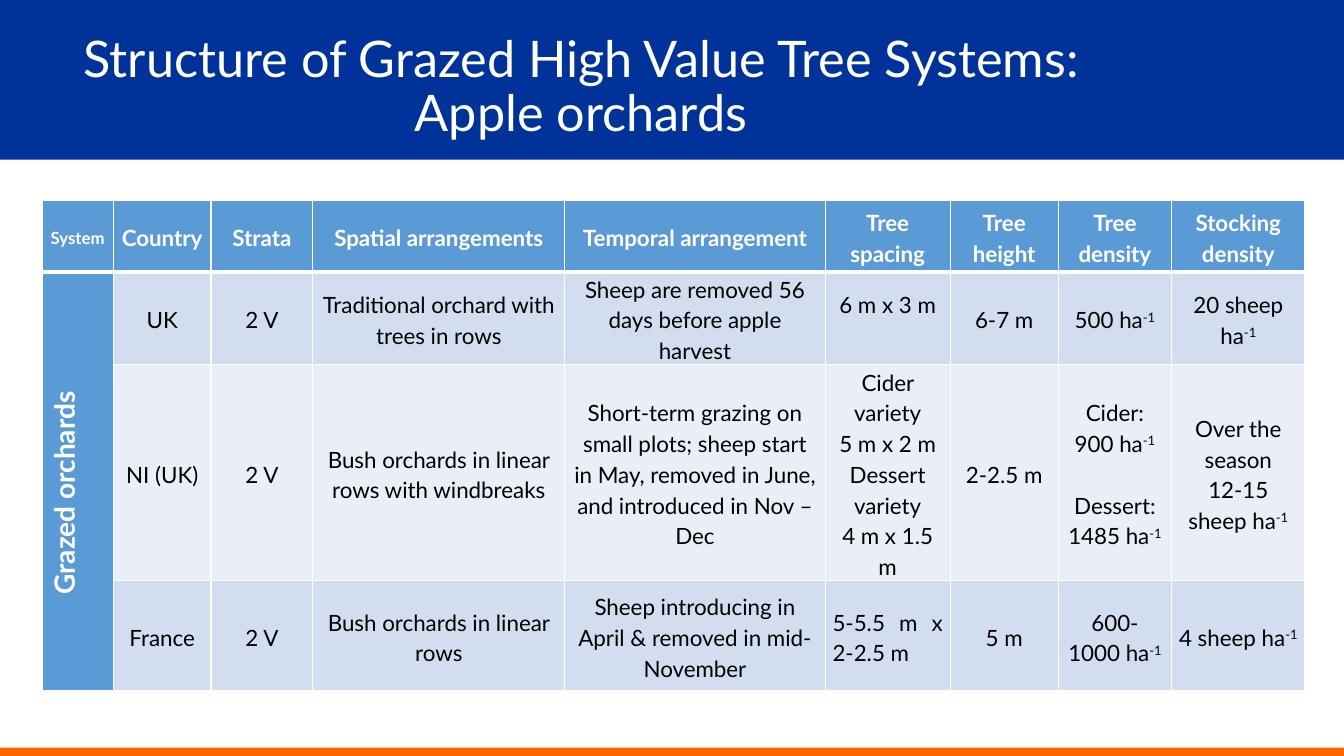
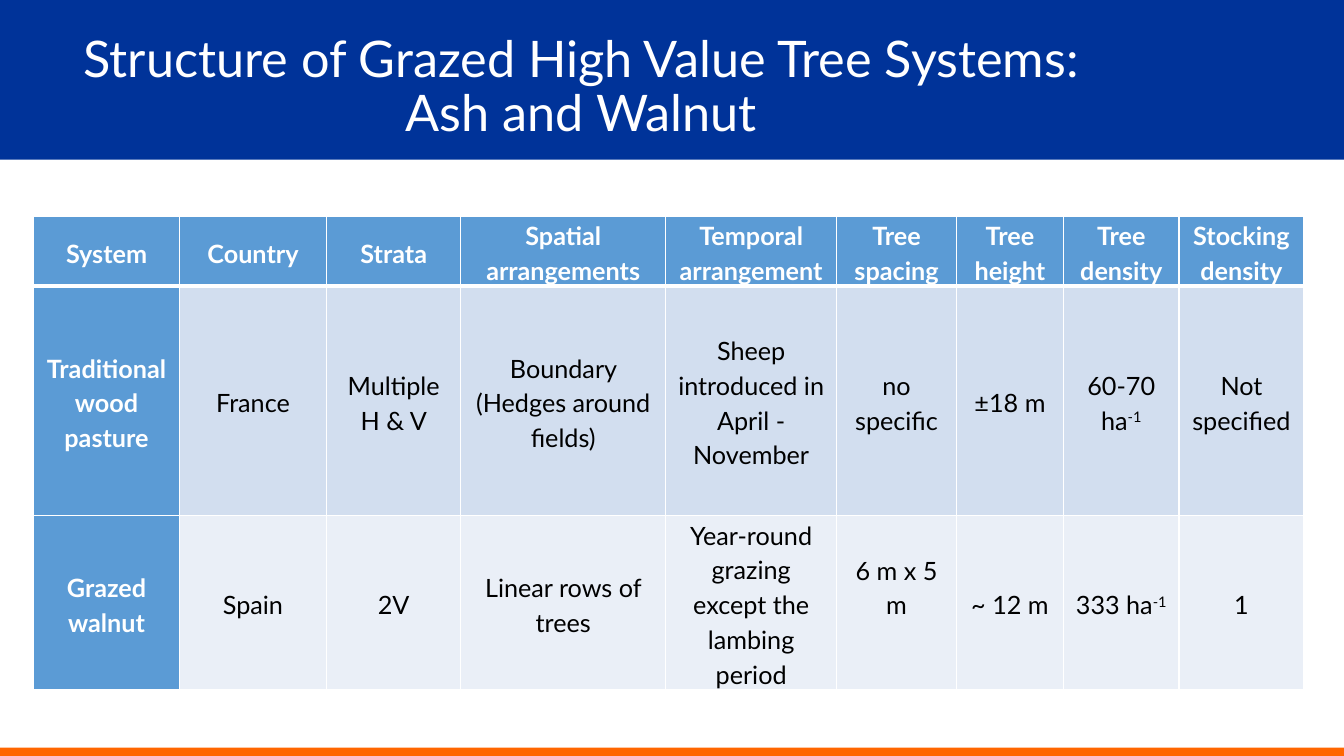
from lxml.etree import SubElement
from pptx import Presentation
from pptx.dml.color import RGBColor
from pptx.enum.shapes import MSO_SHAPE
from pptx.enum.text import MSO_ANCHOR, PP_ALIGN
from pptx.oxml.ns import qn
from pptx.util import Emu, Pt

FONT = "Lato"
WHITE, BLACK = "FFFFFF", "000000"
NAVY, ORANGE = "003399", "FF6600"
HEAD_FILL, BANDS = "5B9BD5", ("D2DEEF", "EAEFF7")
WIDTH, HEIGHT = 1280, 720
HEADER = ["System", "Country", "Strata", "Spatial arrangements", "Temporal arrangement",
          "Tree spacing", "Tree height", "Tree density", "Stocking density"]

APPLE_ROWS = [
    ["Grazed orchards", "UK", "2 V", "Traditional orchard with trees in rows",
     "Sheep are removed 56 days before apple harvest", "6 m x 3 m", "6-7 m",
     "500 ha^-1", "20 sheep ha^-1"],
    ["", "NI (UK)", "2 V", "Bush orchards in linear rows with windbreaks",
     "Short-term grazing on small plots; sheep start in May, removed in June, "
     "and introduced in Nov – Dec",
     "Cider variety\n5 m x 2 m\nDessert variety\n4 m x 1.5 m", "2-2.5 m",
     "Cider: 900 ha^-1\nDessert: 1485 ha^-1", "Over the season\n12-15 sheep ha^-1"],
    ["", "France", "2 V", "Bush orchards in linear rows",
     "Sheep introducing in April & removed in mid-November", "5-5.5 m x 2-2.5 m", "5 m",
     "600-1000 ha^-1", "4 sheep ha^-1"],
]
WALNUT_ROWS = [
    ["Traditional wood pasture", "France", "Multiple\nH & V",
     "Boundary (Hedges around fields)", "Sheep introduced in April - November",
     "no specific", "±18 m", "60-70 ha^-1", "Not specified"],
    ["Grazed walnut", "Spain", "2V", "Linear rows of trees",
     "Year-round grazing except the lambing period", "6 m x 5 m", "~ 12 m",
     "333 ha^-1", "1"],
]


def px(n):
    """Turn pixels into EMU."""
    return Emu(n * 9525)


def color(value):
    """Turn a hex string into a colour."""
    return RGBColor.from_string(value)


def style(p, size, fill, bold=False, align=PP_ALIGN.CENTER, spacing=1.15):
    """Set the font and layout of a paragraph."""
    p.alignment, p.line_spacing = align, spacing
    p.font.name, p.font.size, p.font.bold = FONT, Pt(size), bold
    p.font.color.rgb = color(fill)


def add_band(s, top, height, fill):
    """Draw a full-width band."""
    sp = s.shapes.add_shape(MSO_SHAPE.RECTANGLE, 0, px(top), px(WIDTH), px(height))
    sp.shadow.inherit = False
    sp.fill.solid()
    sp.fill.fore_color.rgb = color(fill)
    sp.line.fill.background()


def add_titled_slide(prs, topic):
    """Add a slide with both bands and its two-line title."""
    s = prs.slides.add_slide(prs.slide_layouts[6])
    add_band(s, 0, 152, NAVY)
    add_band(s, 712, 8, ORANGE)
    tf = s.shapes.add_textbox(px(42), px(37), px(1023), px(94)).text_frame
    tf.word_wrap = True
    tf.vertical_anchor = MSO_ANCHOR.MIDDLE
    p = tf.paragraphs[0]
    p.add_run().text = "Structure of Grazed High Value Tree Systems:"
    p.add_line_break()
    p.add_run().text = topic
    style(p, 36, WHITE, spacing=0.9)
    return s


def set_borders(cell, top, bottom):
    """Give a cell white borders, with top and bottom widths in points."""
    tc_pr = cell._tc.get_or_add_tcPr()
    for side, width in (("L", 1), ("R", 1), ("T", top), ("B", bottom)):
        ln = SubElement(tc_pr, qn(f"a:ln{side}"), w=str(Pt(width)))
        SubElement(SubElement(ln, qn("a:solidFill")), qn("a:srgbClr"), val=WHITE)


def fill_cell(cell, text, size, row, heading):
    """Fill one cell; ^ starts a superscript and a line break a paragraph."""
    set_borders(cell, 3 if row == 1 else 1, 3 if row == 0 else 1)
    cell.fill.solid()
    cell.fill.fore_color.rgb = color(HEAD_FILL if heading else BANDS[(row - 1) % 2])
    cell.vertical_anchor = MSO_ANCHOR.MIDDLE
    cell.margin_left = cell.margin_right = px(7)
    cell.margin_top = cell.margin_bottom = 0
    tf = cell.text_frame
    for i, line in enumerate(text.split("\n")):
        p = tf.add_paragraph() if i else tf.paragraphs[0]
        base, _, power = line.partition("^")
        p.add_run().text = base
        if power:
            r = p.add_run()
            r.text = power
            r._r.get_or_add_rPr().set("baseline", "30000")
        style(p, size, WHITE if heading else BLACK, heading)


def add_system_table(s, left, top, widths, heights, rows, size):
    """Add the table of tree systems."""
    rows = [HEADER] + rows
    table = s.shapes.add_table(len(rows), len(HEADER), px(left), px(top),
                               px(sum(widths)), px(sum(heights))).table
    table.first_col, table.horz_banding = True, False
    for column, width in zip(table.columns, widths):
        column.width = px(width)
    for i, (height, row) in enumerate(zip(heights, rows)):
        table.rows[i].height = px(height)
        for j, text in enumerate(row):
            fill_cell(table.cell(i, j), text, size, i, i == 0 or j == 0)
    return table


def build_apple_slide(prs):
    """Build the slide on apple orchards."""
    s = add_titled_slide(prs, "Apple orchards")
    table = add_system_table(s, 40, 191, [68, 93, 97, 240, 248, 119, 103, 108, 127],
                             [68, 88, 205, 105], APPLE_ROWS, 16)
    table.cell(0, 0).text_frame.paragraphs[0].font.size = Pt(12)
    system = table.cell(1, 0)
    system.merge(table.cell(3, 0))
    system._tc.get_or_add_tcPr().set("vert", "vert270")
    system.margin_left, system.margin_right = px(4), px(26)
    system.text_frame.paragraphs[0].font.size = Pt(20)
    table.cell(1, 5).margin_bottom = px(29)
    table.cell(2, 7).text_frame.paragraphs[1].space_before = Pt(22)
    table.cell(3, 5).text_frame.paragraphs[0].alignment = PP_ALIGN.JUSTIFY


def build_walnut_slide(prs):
    """Build the slide on ash and walnut."""
    s = add_titled_slide(prs, "Ash and Walnut")
    table = add_system_table(s, 32, 206, [139, 140, 128, 195, 163, 114, 102, 110, 119],
                             [66, 219, 165], WALNUT_ROWS, 18)
    table.cell(2, 5).margin_bottom = px(33)


def main():
    """Build and save the presentation."""
    prs = Presentation()
    prs.slide_width, prs.slide_height = px(WIDTH), px(HEIGHT)
    build_apple_slide(prs)
    build_walnut_slide(prs)
    prs.save("out.pptx")


if __name__ == "__main__":
    main()
